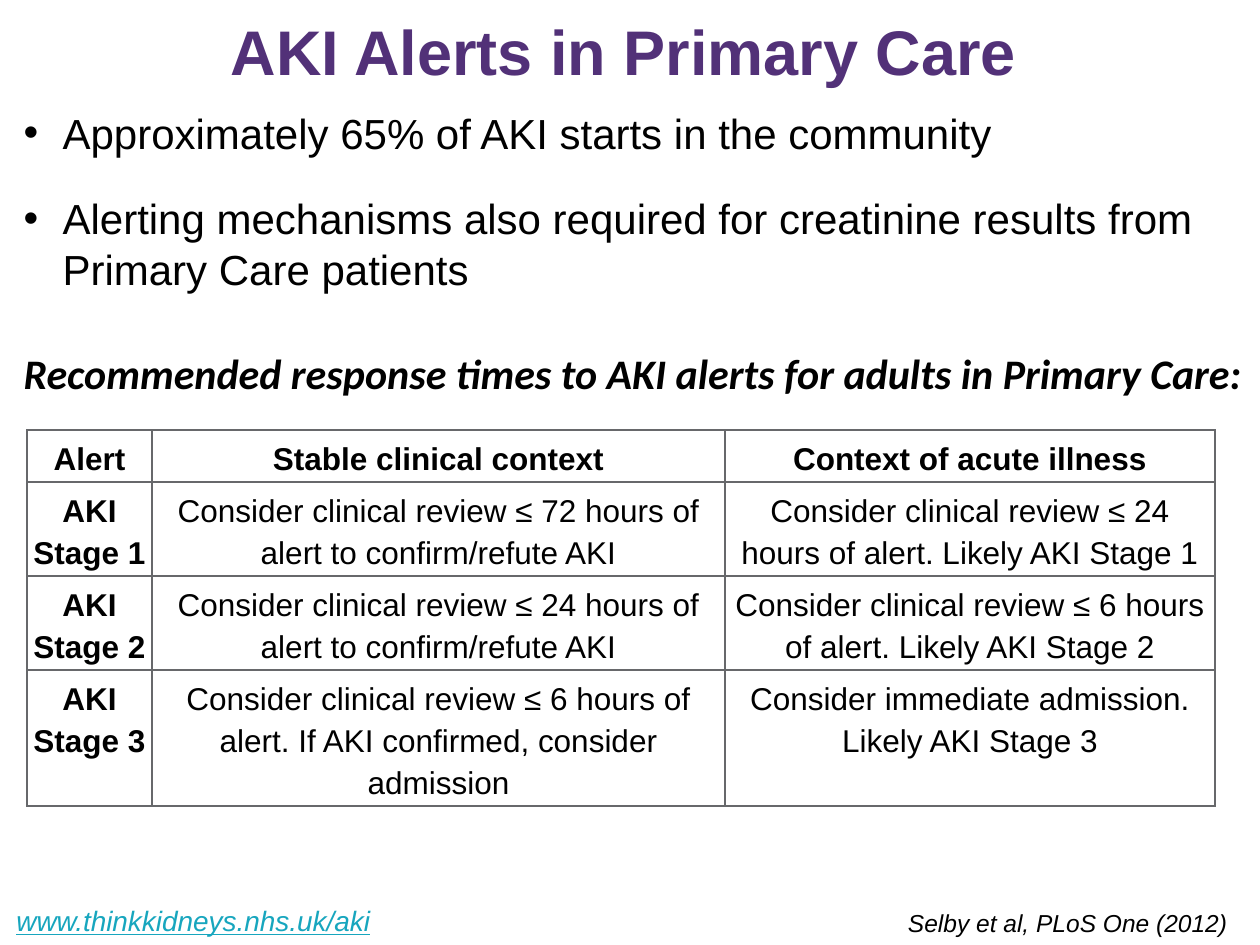
from lxml import etree
from pptx import Presentation
from pptx.dml.color import RGBColor
from pptx.enum.text import MSO_ANCHOR, MSO_AUTO_SIZE, PP_ALIGN
from pptx.oxml.ns import qn
from pptx.util import Emu, Pt

LEFT, CENTER, RIGHT = PP_ALIGN.LEFT, PP_ALIGN.CENTER, PP_ALIGN.RIGHT
TOP = MSO_ANCHOR.TOP
NO_AUTOFIT = MSO_AUTO_SIZE.NONE

THEME = {
    "font": "Arial", "heading_font": "Calibri",
    "title": "523178", "text": "000000", "link": "17A6BE", "border": "67686B",
    "title_size": 36, "body_size": 24, "table_size": 18,
    "link_size": 16, "citation_size": 14, "border_width": 1,
}


def px(length):
    return Emu(round(length * 914400 / 126))


def write(paragraph, text, size, font=THEME["font"], color=THEME["text"], bold=False,
          italic=False, underline=False, align=LEFT, before=0, after=0, line=1.0, bullet=None):
    """Fill a paragraph; bullet is True, False, or None to leave the bullet alone."""
    if bullet is not None:
        properties = paragraph._p.get_or_add_pPr()
        indent = px(39) if bullet else 0
        properties.set("marL", str(indent))
        properties.set("indent", str(-indent))
        if bullet:
            etree.SubElement(properties, qn("a:buFont"), typeface="Arial")
            etree.SubElement(properties, qn("a:buChar"), char="•")
        else:
            etree.SubElement(properties, qn("a:buNone"))
    paragraph.alignment = align
    paragraph.line_spacing = line
    paragraph.space_before = Pt(before)
    paragraph.space_after = Pt(after)
    run = paragraph.add_run()
    run.text = text
    run.font.name = font
    run.font.size = Pt(size)
    run.font.bold = bold
    run.font.italic = italic
    run.font.underline = underline
    run.font.color.rgb = RGBColor.from_string(color)


presentation = Presentation()
presentation.slide_width, presentation.slide_height = px(1260), px(945)
slide = presentation.slides.add_slide(presentation.slide_layouts[1])

# Title and body
title, body = slide.placeholders
for placeholder, (left, top, width, height) in (
        (title, (0, 0, 1247, 111)), (body, (11, 101, 1249, 301))):
    placeholder.left, placeholder.top = px(left), px(top)
    placeholder.width, placeholder.height = px(width), px(height)
    placeholder.text_frame.auto_size = NO_AUTOFIT
    placeholder.text_frame.vertical_anchor = TOP
    placeholder.text_frame.word_wrap = True

title.text_frame.margin_top = px(13)
write(title.text_frame.paragraphs[0], "AKI Alerts in Primary Care", THEME["title_size"],
      color=THEME["title"], bold=True, align=CENTER)

body_lines = [
    ("Approximately 65% of AKI starts in the community", {"bullet": True}),
    ("Alerting mechanisms also required for creatinine results from Primary Care patients",
     {"bullet": True, "before": 20}),
    ("Recommended response times to AKI alerts for adults in Primary Care:",
     {"bullet": False, "before": 31, "font": THEME["heading_font"],
      "bold": True, "italic": True}),
]
for index, (text, text_format) in enumerate(body_lines):
    frame = body.text_frame
    paragraph = frame.add_paragraph() if index else frame.paragraphs[0]
    write(paragraph, text, THEME["body_size"], **text_format)

# Response times
rows = [
    ("Alert", "Stable clinical context", "Context of acute illness"),
    ("AKI Stage 1", "Consider clinical review ≤ 72 hours of alert to confirm/refute AKI",
     "Consider clinical review ≤ 24 hours of alert. Likely AKI Stage 1"),
    ("AKI Stage 2", "Consider clinical review ≤ 24 hours of alert to confirm/refute AKI",
     "Consider clinical review ≤ 6 hours of alert. Likely AKI Stage 2"),
    ("AKI Stage 3",
     "Consider clinical review ≤ 6 hours of alert. If AKI confirmed, consider admission",
     "Consider immediate admission. Likely AKI Stage 3"),
]
column_widths = (125, 573, 490)
row_heights = [10 + 42 * line_count for line_count in (1, 2, 2, 3)]
table = slide.shapes.add_table(len(rows), len(column_widths), px(27), px(430),
                               px(sum(column_widths)), px(sum(row_heights))).table
table.first_row = table.horz_banding = False
for column, width in zip(table.columns, column_widths):
    column.width = px(width)
for row, height in zip(table.rows, row_heights):
    row.height = px(height)

for row_index, texts in enumerate(rows):
    for column_index, text in enumerate(texts):
        cell = table.cell(row_index, column_index)
        cell.margin_left = cell.margin_right = cell.margin_top = cell.margin_bottom = px(5)
        cell.vertical_anchor = TOP
        write(cell.text_frame.paragraphs[0], text, THEME["table_size"], align=CENTER,
              bold=row_index == 0 or column_index == 0, line=1.19, after=6)
        cell_properties = cell._tc.get_or_add_tcPr()
        for side in ("a:lnL", "a:lnR", "a:lnT", "a:lnB"):
            border = etree.SubElement(cell_properties, qn(side),
                                      w=str(Pt(THEME["border_width"])))
            fill = etree.SubElement(border, qn("a:solidFill"))
            etree.SubElement(fill, qn("a:srgbClr"), val=THEME["border"])
        cell.fill.background()

# Footer
footers = [
    ((803, 902, 437, 43), "Selby et al, PLoS One (2012)",
     {"size": THEME["citation_size"], "align": RIGHT}),
    ((4, 897, 449, 47), "www.thinkkidneys.nhs.uk/aki",
     {"size": THEME["link_size"], "color": THEME["link"], "underline": True}),
]
for bounds, text, text_format in footers:
    text_box = slide.shapes.add_textbox(*map(px, bounds))
    text_box.text_frame.word_wrap = True
    write(text_box.text_frame.paragraphs[0], text, italic=True, **text_format)

presentation.save("out.pptx")
